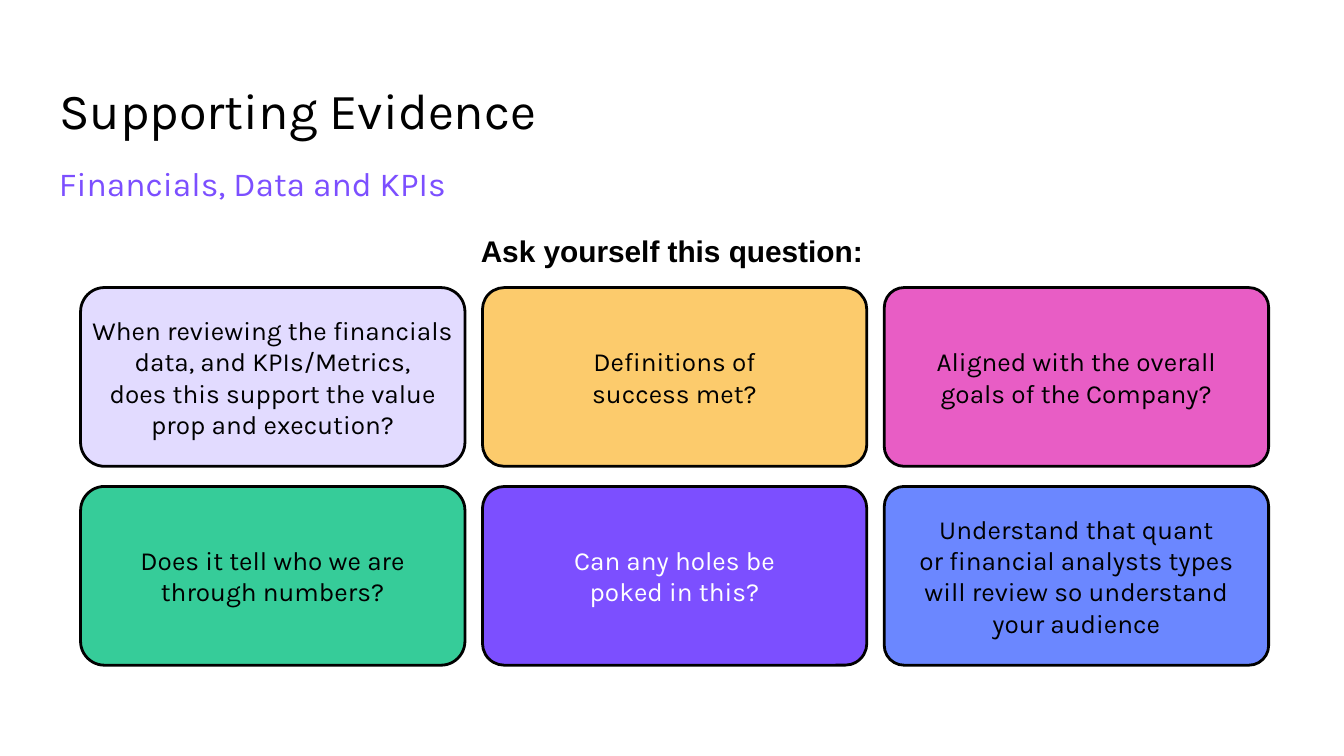
from pptx import Presentation
from pptx import util as u
from pptx.dml.color import RGBColor
from pptx.enum import shapes, text

HUES = {
    "black": "000000", "white": "FFFFFF", "lilac": "E2DBFF", "amber": "FCCB6C",
    "pink": "E85DC5", "green": "36CC99", "violet": "7C4FFF", "blue": "6B87FF",
}
ALIGN = text.PP_ALIGN
ANCHOR = text.MSO_ANCHOR

# Words, fill, text colour and corner radius, row by row
CARDS = [
    ("", "lilac", "black", 0.134),
    ("Definitions of\nsuccess met?", "amber", "black", 0.122),
    ("Aligned with the overall goals of the Company?", "pink", "black", 0.111),
    ("Does it tell who we are through numbers?", "green", "black", 0.134),
    ("Can any holes be\npoked in this?", "violet", "white", 0.122),
    ("Understand that quant\nor financial analysts types will review "
     "so understand your audience", "blue", "black", 0.111),
]
COLS = 3
LEFT, TOP = 0.6, 2.14
WIDE, HIGH = 2.86, 1.33
STEP_X, STEP_Y = 2.99, 1.48


def hue(name):
    return RGBColor.from_string(HUES[name])


def write(frame, words, size=14, font="Karla", color="black", bold=False,
          align=ALIGN.CENTER, anchor=ANCHOR.TOP, pad=0.1):
    """Fill a text frame with one paragraph; newlines become line breaks."""
    frame.word_wrap = True
    frame.auto_size = text.MSO_AUTO_SIZE.NONE
    frame.vertical_anchor = anchor
    frame.margin_left = frame.margin_right = u.Inches(0.1)
    frame.margin_top = frame.margin_bottom = u.Inches(pad)
    para = frame.paragraphs[0]
    para.alignment = align
    for i, line in enumerate(words.split("\n")):
        if i:
            para.add_line_break()
        run = para.add_run()
        run.text = line
        run.font.size = u.Pt(size)
        run.font.name = font
        run.font.bold = bold
        run.font.color.rgb = hue(color)


class Page:
    def __init__(self, deck):
        self.slide = deck.slides.add_slide(deck.slide_layouts[5])
        self.shapes = self.slide.shapes

    def title(self, words, box):
        item = self.shapes.title
        item.left, item.top, item.width, item.height = map(u.Inches, box)
        write(item.text_frame, words, size=27, align=ALIGN.LEFT)

    def label(self, words, box, **style):
        item = self.shapes.add_textbox(*map(u.Inches, box))
        write(item.text_frame, words, **style)

    def card(self, words, box, fill, color, curve):
        item = self.shapes.add_shape(
            shapes.MSO_SHAPE.ROUNDED_RECTANGLE, *map(u.Inches, box))
        item.adjustments[0] = curve
        item.shadow.inherit = False
        item.fill.solid()
        item.fill.fore_color.rgb = hue(fill)
        item.line.color.rgb = hue("black")
        item.line.width = u.Pt(1.5)
        if words:
            write(item.text_frame, words, color=color, anchor=ANCHOR.MIDDLE)


def main():
    deck = Presentation()
    deck.slide_width = u.Inches(10)
    deck.slide_height = deck.slide_width * 9 // 16
    page = Page(deck)
    page.title("Supporting Evidence", (0.34, 0.49, 9.32, 0.63))
    page.label("Financials, Data and KPIs", (0.34, 1.11, 9.32, 0.63),
               size=18, color="violet", align=ALIGN.LEFT)
    for i, (words, fill, color, curve) in enumerate(CARDS):
        row, col = divmod(i, COLS)
        box = (LEFT + col * STEP_X, TOP + row * STEP_Y, WIDE, HIGH)
        page.card(words, box, fill, color, curve)
    # The first card's text runs wider than the card's own margins allow
    page.label("When reviewing the financials data, and KPIs/Metrics,\n"
               "does this support the value\nprop and execution?",
               (0.56, 2.29, 2.94, 1.04), pad=0.05)
    page.label("Ask yourself this question:", (3.46, 1.68, 3.08, 0.37),
               size=16, font="Arial", bold=True, pad=0.05)
    deck.save("out.pptx")


if __name__ == "__main__":
    main()
